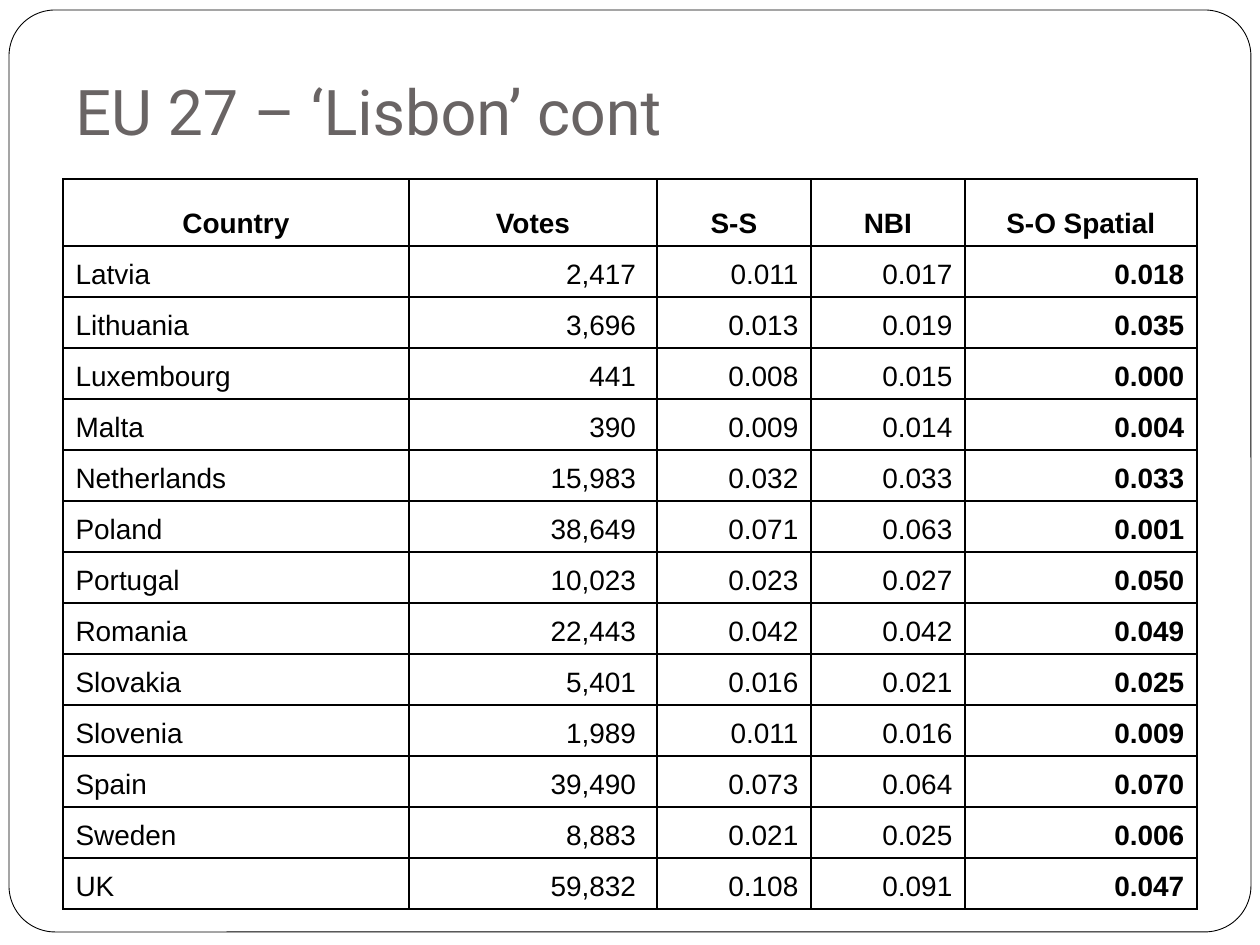
import pptx
import pptx.util
import pptx.dml.color
import pptx.enum.shapes
import pptx.enum.text
import pptx.oxml
import pptx.oxml.ns

PX = 914400 // 126  # EMU in one px
COLORS = {"paper": "FFFFFF", "ink": "000000", "title": "696464"}
ALIGN = pptx.enum.text.PP_ALIGN
ANCHOR = pptx.enum.text.MSO_ANCHOR

HEADINGS = ["Country", "Votes", "S-S", "NBI", "S-O Spatial"]
COUNTRIES = [
    ("Latvia", "2,417", "0.011", "0.017", "0.018"),
    ("Lithuania", "3,696", "0.013", "0.019", "0.035"),
    ("Luxembourg", "441", "0.008", "0.015", "0.000"),
    ("Malta", "390", "0.009", "0.014", "0.004"),
    ("Netherlands", "15,983", "0.032", "0.033", "0.033"),
    ("Poland", "38,649", "0.071", "0.063", "0.001"),
    ("Portugal", "10,023", "0.023", "0.027", "0.050"),
    ("Romania", "22,443", "0.042", "0.042", "0.049"),
    ("Slovakia", "5,401", "0.016", "0.021", "0.025"),
    ("Slovenia", "1,989", "0.011", "0.016", "0.009"),
    ("Spain", "39,490", "0.073", "0.064", "0.070"),
    ("Sweden", "8,883", "0.021", "0.025", "0.006"),
    ("UK", "59,832", "0.108", "0.091", "0.047"),
]
COLUMN_WIDTHS = [346, 248, 154, 154, 232]
HEADING_HEIGHT, ROW_HEIGHT = 67, 51
VOTES_COLUMN, VOTES_MARGIN = 1, 21


def color(name):
    return pptx.dml.color.RGBColor.from_string(COLORS[name])


def emu(box):
    return [length * PX for length in box]


def style(font, name, size, ink, bold=False):
    font.name, font.size, font.bold = name, pptx.util.Pt(size), bold
    font.color.rgb = color(ink)


def add_frame(page, box):
    """Rounded outline around the page."""
    frame = page.shapes.add_shape(
        pptx.enum.shapes.MSO_SHAPE.ROUNDED_RECTANGLE, *emu(box))
    frame.adjustments[0] = 0.05
    frame.shadow.inherit = False
    frame.fill.solid()
    frame.fill.fore_color.rgb = color("paper")
    frame.line.color.rgb = color("ink")
    frame.line.width = pptx.util.Pt(0.5)


def add_title(page, box, text):
    text_frame = page.shapes.add_textbox(*emu(box)).text_frame
    text_frame.word_wrap = True
    text_frame.vertical_anchor = ANCHOR.BOTTOM
    text_frame.margin_bottom = pptx.util.Inches(0.1)
    para = text_frame.paragraphs[0]
    para.text = text
    style(para.font, "Roboto", 36, "title")


def add_borders(cell):
    properties = cell._tc.get_or_add_tcPr()
    for side in ("lnL", "lnR", "lnT", "lnB"):
        properties.append(pptx.oxml.parse_xml(
            f'<a:{side} {pptx.oxml.ns.nsdecls("a")} w="{pptx.util.Pt(1)}">'
            f'<a:solidFill><a:srgbClr val="{COLORS["ink"]}"/></a:solidFill>'
            f'</a:{side}>'))


def fill_cell(cell, text, align, bold):
    add_borders(cell)
    cell.fill.solid()
    cell.fill.fore_color.rgb = color("paper")
    cell.vertical_anchor = ANCHOR.BOTTOM
    para = cell.text_frame.paragraphs[0]
    para.text = text
    para.alignment = align
    style(para.font, "Arial", 16, "ink", bold)


def add_votes_table(page, left, top):
    heights = [HEADING_HEIGHT] + [ROW_HEIGHT] * len(COUNTRIES)
    box = (left, top, sum(COLUMN_WIDTHS), sum(heights))
    table = page.shapes.add_table(
        len(heights), len(COLUMN_WIDTHS), *emu(box)).table
    for column, width in zip(table.columns, COLUMN_WIDTHS):
        column.width = width * PX
    for row, height in zip(table.rows, heights):
        row.height = height * PX

    # Heading row
    for index, heading in enumerate(HEADINGS):
        fill_cell(table.cell(0, index), heading, ALIGN.CENTER, True)

    # One row per country, with the last column in bold
    for row, values in enumerate(COUNTRIES, start=1):
        for index, value in enumerate(values):
            cell = table.cell(row, index)
            align = ALIGN.RIGHT if index else ALIGN.LEFT
            fill_cell(cell, value, align, index == len(values) - 1)
            if index == VOTES_COLUMN:
                cell.margin_right = VOTES_MARGIN * PX


def main():
    deck = pptx.Presentation()
    deck.slide_width, deck.slide_height = emu((1260, 945))
    page = deck.slides.add_slide(deck.slide_layouts[6])
    add_frame(page, (9, 10, 1242, 922))
    add_title(page, (63, 94, 1134, 67), "EU 27 – ‘Lisbon’ cont")
    add_votes_table(page, 63, 179)
    deck.save("out.pptx")


if __name__ == "__main__":
    main()
